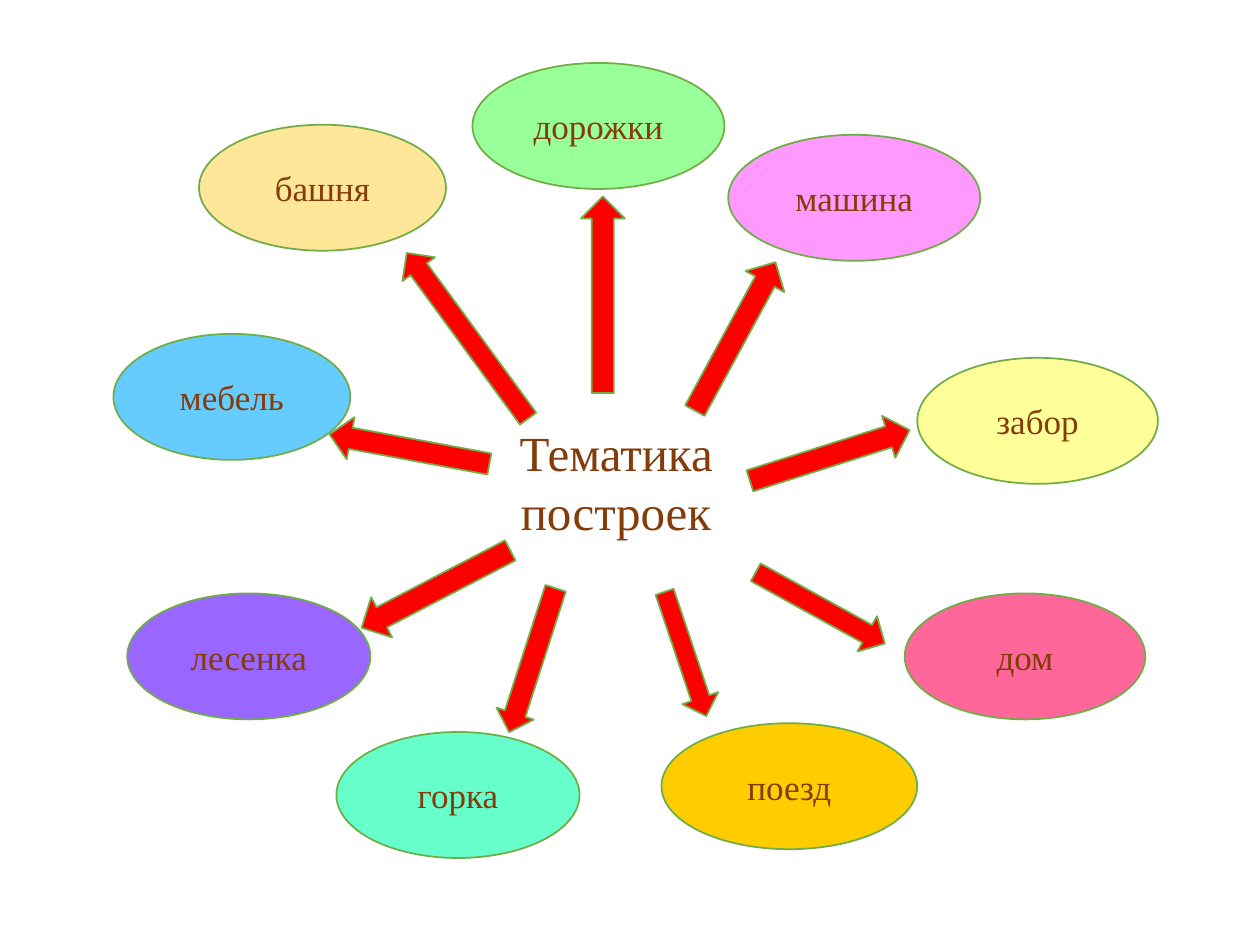
from typing import NamedTuple

from pptx import Presentation
from pptx.dml.color import RGBColor
from pptx.enum.shapes import MSO_SHAPE
from pptx.enum.text import MSO_ANCHOR, MSO_AUTO_SIZE, PP_ALIGN
from pptx.shapes.autoshape import Shape
from pptx.slide import Slide
from pptx.text.text import TextFrame
from pptx.util import Inches, Pt

COLUMNS, ROWS = 10, 7.5
CELL = Inches(1)
FONT = "Times New Roman"
BROWN, RED, GREEN = "843C0B", "FF0000", "70AD47"


class Box(NamedTuple):
    """Left and width in grid columns, top and height in grid rows."""
    left: float
    top: float
    width: float
    height: float = 1


class Topic(NamedTuple):
    label: str
    color: str
    oval: Box
    arrow: Box
    angle: float
    shaft: float = 0.5


TITLE_BOX = Box(3.5, 3.3, 2.78, 1.04)
TOPICS = [
    Topic("дорожки", "99FF99", Box(3.75, 0.5, 2), Box(4.61, 1.56, 0.35, 1.56), 0),
    Topic("машина", "FF99FF", Box(5.78, 1.07, 2), Box(5.66, 2, 0.35, 1.34), 28.5),
    Topic("забор", "FFFF99", Box(7.28, 2.84, 1.91), Box(6.41, 2.95, 0.35, 1.33), 72.4),
    Topic("дом", "FF6699", Box(7.18, 4.71, 1.91), Box(6.35, 4.24, 0.32, 1.17), 118.9),
    Topic("поезд", "FFCC00", Box(5.25, 5.74, 2.03), Box(5.29, 4.67, 0.3, 1.04), 161.4),
    Topic("горка", "66FFCC", Box(2.67, 5.81, 1.93), Box(4.07, 4.64, 0.31, 1.2), 197.9, 0.55),
    Topic("лесенка", "9966FF", Box(1.01, 4.71, 1.93), Box(3.28, 4.01, 0.36, 1.33), 242.5),
    Topic("мебель", "66CCFF", Box(0.9, 2.65, 1.88), Box(3.08, 2.92, 0.34, 1.29), 280.5),
    Topic("башня", "FFE699", Box(1.58, 0.99, 1.96), Box(3.55, 1.85, 0.32, 1.63), 323.8),
]


def rgb(color: str) -> RGBColor:
    return RGBColor.from_string(color)


def emu(box: Box) -> list[int]:
    return [round(length * CELL) for length in box]


def write(frame: TextFrame, text: str, size: int) -> None:
    frame.text = text
    frame.word_wrap = True
    frame.vertical_anchor = MSO_ANCHOR.MIDDLE
    for paragraph in frame.paragraphs:
        paragraph.alignment = PP_ALIGN.CENTER
        for run in paragraph.runs:
            run.font.name = FONT
            run.font.size = Pt(size)
            run.font.color.rgb = rgb(BROWN)


def add_outlined(slide: Slide, kind: MSO_SHAPE, box: Box, color: str) -> Shape:
    shape = slide.shapes.add_shape(kind, *emu(box))
    shape.shadow.inherit = False
    shape.fill.solid()
    shape.fill.fore_color.rgb = rgb(color)
    shape.line.color.rgb = rgb(GREEN)
    shape.line.width = Pt(1)
    return shape


def add_arrow(slide: Slide, topic: Topic) -> None:
    arrow = add_outlined(slide, MSO_SHAPE.UP_ARROW, topic.arrow, RED)
    arrow.adjustments[0] = topic.shaft
    arrow.rotation = topic.angle


def add_oval(slide: Slide, topic: Topic) -> None:
    oval = add_outlined(slide, MSO_SHAPE.OVAL, topic.oval, topic.color)
    write(oval.text_frame, topic.label, 20)


def place_title(slide: Slide, text: str) -> None:
    title = slide.shapes.title
    title.left, title.top, title.width, title.height = emu(TITLE_BOX)
    write(title.text_frame, text, 28)
    title.text_frame.auto_size = MSO_AUTO_SIZE.SHAPE_TO_FIT_TEXT


def main() -> None:
    deck = Presentation()
    deck.slide_width = round(COLUMNS * CELL)
    deck.slide_height = round(ROWS * CELL)
    slide = deck.slides.add_slide(deck.slide_layouts.get_by_name("Title Only"))
    place_title(slide, "Тематика\nпостроек")
    for topic in TOPICS:
        add_arrow(slide, topic)
    for topic in TOPICS:
        add_oval(slide, topic)
    deck.save("out.pptx")


if __name__ == "__main__":
    main()
